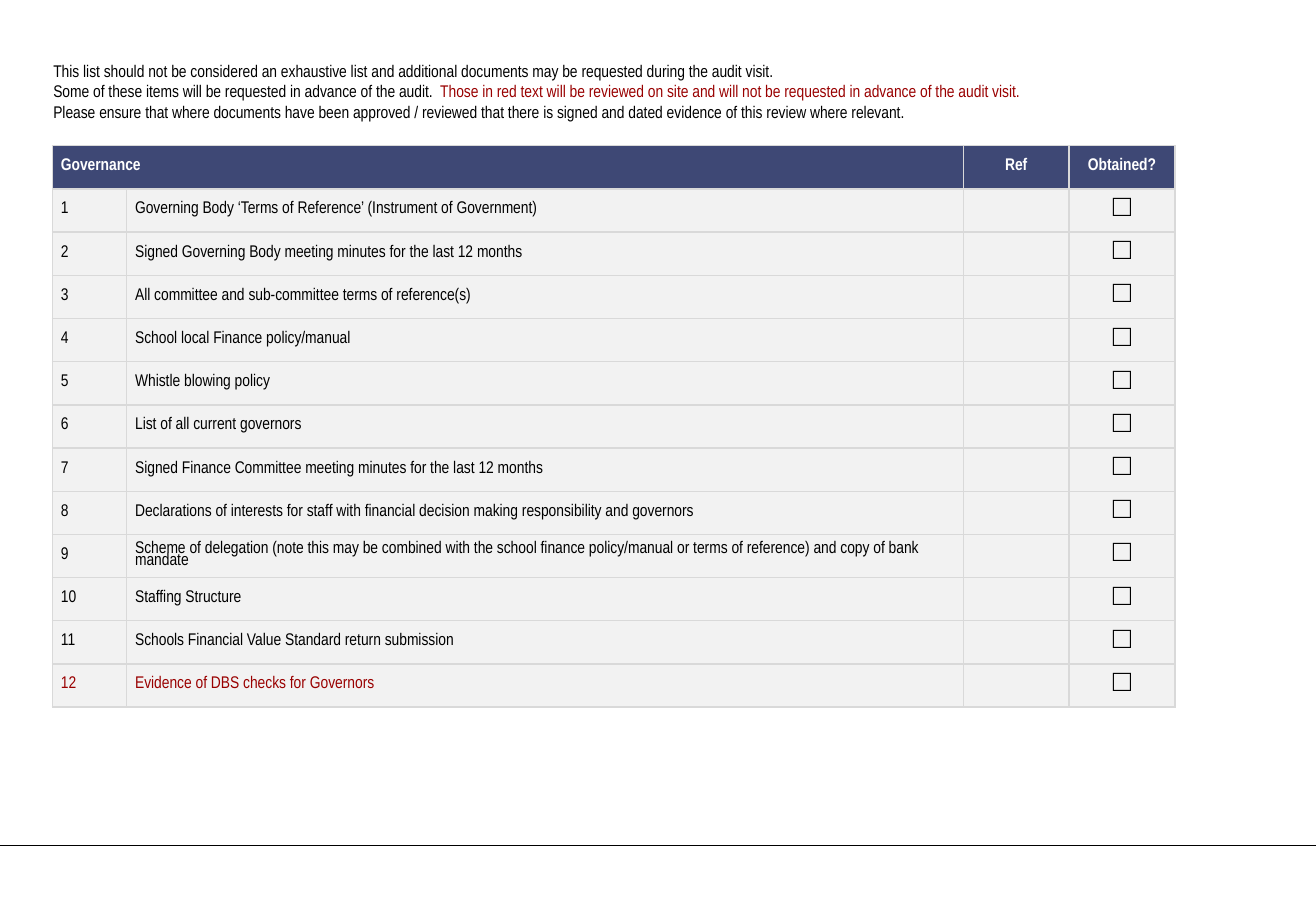
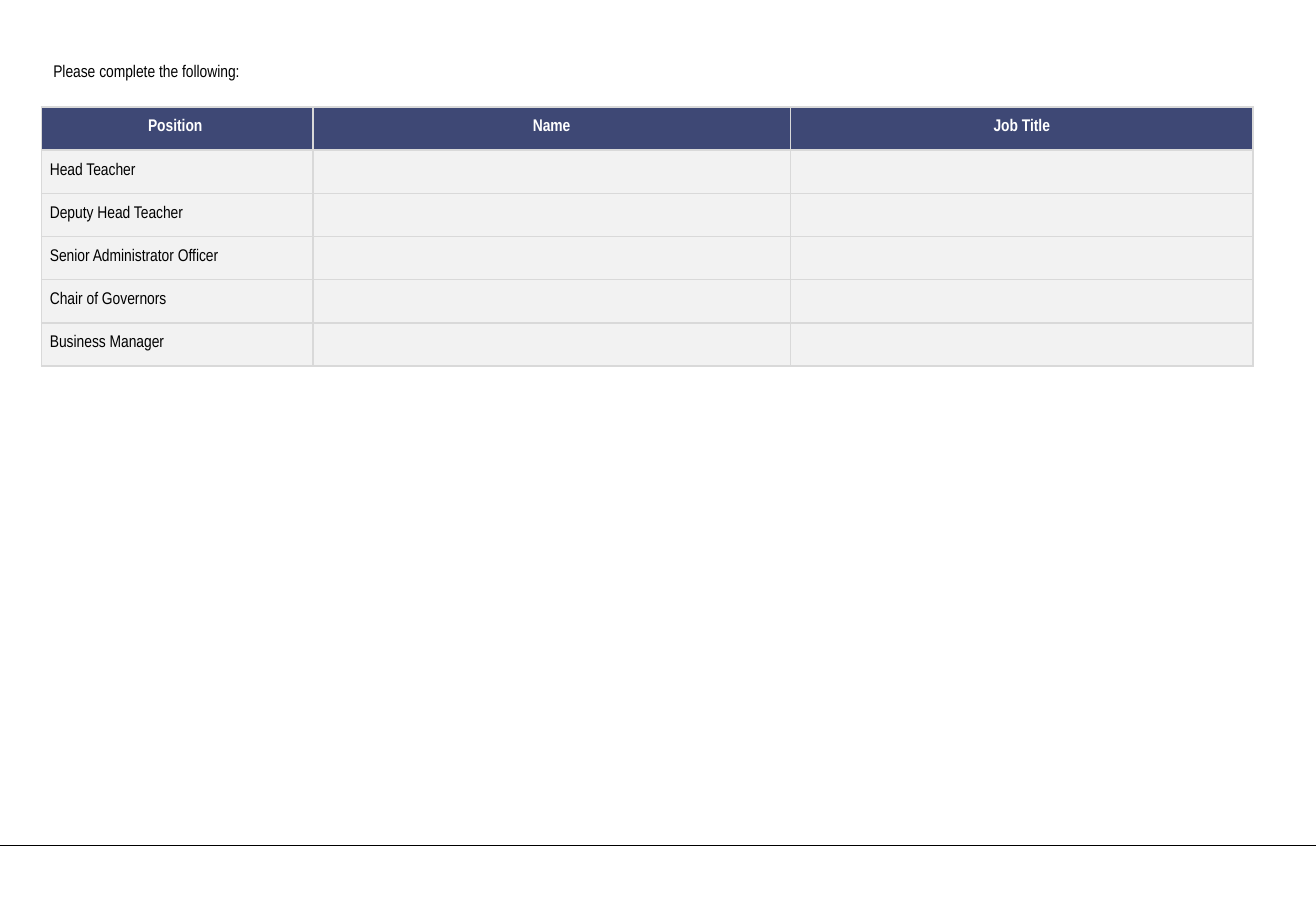
from lxml import etree
from pptx import Presentation
from pptx.dml.color import RGBColor
from pptx.enum import shapes, text
from pptx.oxml import ns
from pptx.util import Pt

COLORS = dict(ink="000000", red="990000", white="FFFFFF", navy="3E4875", grey="F2F2F2", rule="D9D9D9")
FONT, BOX_FONT = "Arial Narrow", "Arial"
WIDTH, HEIGHT = 780, 540
FOOTER_Y = 501.1
ROW_HEIGHT = 25.6
BOX = "□"
LEFT, CENTER = text.PP_ALIGN.LEFT, text.PP_ALIGN.CENTER

DOCUMENTS = [
    "Governing Body ‘Terms of Reference’ (Instrument of Government)",
    "Signed Governing Body meeting minutes for the last 12 months",
    "All committee and sub-committee terms of reference(s)",
    "School local Finance policy/manual",
    "Whistle blowing policy",
    "List of all current governors",
    "Signed Finance Committee meeting minutes for the last 12 months",
    "Declarations of interests for staff with financial decision making responsibility and governors",
    "Scheme of delegation (note this may be combined with the school finance policy/manual"
    " or terms of reference) and copy of bank mandate",
    "Staffing Structure",
    "Schools Financial Value Standard return submission",
    "Evidence of DBS checks for Governors",
]
ON_SITE = {12}
POSITIONS = ["Head Teacher", "Deputy Head Teacher", "Senior Administrator Officer",
             "Chair of Governors", "Business Manager"]

SLIDES = [
    dict(
        intro=[
            [("This list should not be considered an exhaustive list and additional documents"
              " may be requested during the audit visit.", "ink")],
            [("Some of these items will be requested in advance of the audit.  ", "ink"),
             ("Those in red text will be reviewed on site and will not be requested in advance"
              " of the audit visit.", "red")],
            [("Please ensure that where documents have been approved / reviewed that there is"
              " signed and dated evidence of this review where relevant.", "ink")],
        ],
        at=(31, 86.4),
        widths=[44, 496, 62.7, 62.7],
        header=[("Governance", LEFT), ("", LEFT), ("Ref", CENTER), ("Obtained?", CENTER)],
        merge_header=2,
        rows=[([str(n), name, "", BOX], "red" if n in ON_SITE else "ink")
              for n, name in enumerate(DOCUMENTS, 1)],
    ),
    dict(
        intro=[[("Please complete the following:", "ink")]],
        at=(24.5, 63.4),
        widths=[161, 283, 274.3],
        header=[("Position ", CENTER), ("Name", CENTER), ("Job Title", CENTER)],
        merge_header=1,
        rows=[([name, "", ""], "ink") for name in POSITIONS],
    ),
]


def rgb(name):
    return RGBColor.from_string(COLORS[name])


def add_run(p, words, color, size=10, font=FONT, bold=False):
    r = p.add_run()
    r.text = words
    r.font.name, r.font.size, r.font.bold = font, Pt(size), bold
    r.font.color.rgb = rgb(color)


def add_footer_line(s):
    line = s.shapes.add_connector(shapes.MSO_CONNECTOR.STRAIGHT, Pt(0), Pt(FOOTER_Y), Pt(WIDTH), Pt(FOOTER_Y))
    line.line.color.rgb = rgb("ink")
    line.line.width = Pt(0.5)
    etree.SubElement(line._element.spPr, ns.qn("a:effectLst"))


def add_intro(s, lines):
    sp = s.shapes.add_textbox(Pt(24.5), Pt(32.4), Pt(705), Pt(7.2 + 12.2 * len(lines)))
    tf = sp.text_frame
    tf.word_wrap = True
    tf.auto_size = text.MSO_AUTO_SIZE.SHAPE_TO_FIT_TEXT
    for i, line in enumerate(lines):
        p = tf.paragraphs[0] if i == 0 else tf.add_paragraph()
        for words, color in line:
            add_run(p, words, color)


def style_cell(cell, fill):
    cell.margin_left = cell.margin_right = Pt(5.1)
    cell.margin_top = cell.margin_bottom = Pt(0)
    tcPr = cell._tc.get_or_add_tcPr()
    for side in ("lnL", "lnR", "lnT", "lnB"):
        ln = etree.SubElement(tcPr, ns.qn("a:" + side), w=str(Pt(1)))
        paint = etree.SubElement(ln, ns.qn("a:solidFill"))
        etree.SubElement(paint, ns.qn("a:srgbClr"), val=COLORS["rule"])
    cell.fill.solid()
    cell.fill.fore_color.rgb = rgb(fill)


def write_cell(cell, words, color, align=LEFT, bold=False):
    if not words:
        return
    p = cell.text_frame.paragraphs[0]
    if words == BOX:
        p.alignment = CENTER
        add_run(p, words, "ink", 18, BOX_FONT)
        return
    cell.vertical_anchor = text.MSO_ANCHOR.MIDDLE
    p.alignment = align
    p.line_spacing = 0.73
    add_run(p, words, color, bold=bold)


def add_grid(s, at, widths, header, merge_header, rows):
    count = len(rows) + 1
    left, top = at
    table = s.shapes.add_table(count, len(widths), Pt(left), Pt(top),
                               Pt(sum(widths)), Pt(ROW_HEIGHT * count)).table
    table.first_row = table.horz_banding = False
    for column, width in zip(table.columns, widths):
        column.width = Pt(width)
    for i, row in enumerate(table.rows):
        row.height = Pt(ROW_HEIGHT)
        for cell in row.cells:
            style_cell(cell, "grey" if i else "navy")
    if merge_header > 1:
        table.cell(0, 0).merge(table.cell(0, merge_header - 1))
    for j, (words, align) in enumerate(header):
        write_cell(table.cell(0, j), words, "white", align, True)
    for i, (values, color) in enumerate(rows, 1):
        for j, words in enumerate(values):
            write_cell(table.cell(i, j), words, color)


def main():
    prs = Presentation()
    prs.slide_width, prs.slide_height = Pt(WIDTH), Pt(HEIGHT)
    for content in SLIDES:
        s = prs.slides.add_slide(prs.slide_layouts[6])
        add_footer_line(s)
        add_intro(s, content["intro"])
        add_grid(s, content["at"], content["widths"], content["header"],
                 content["merge_header"], content["rows"])
    prs.save("out.pptx")


if __name__ == "__main__":
    main()
